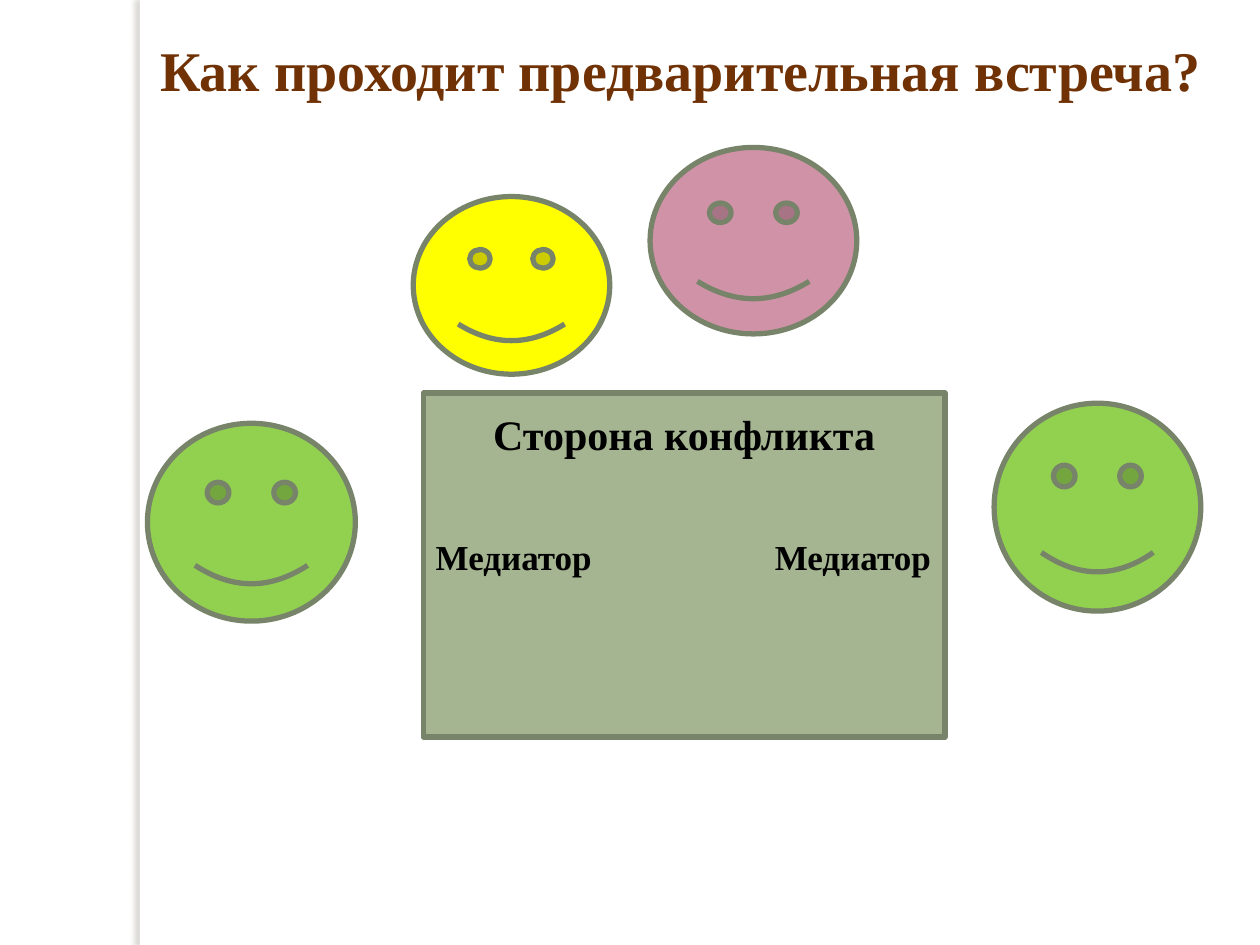
from lxml.etree import SubElement
from pptx import Presentation
from pptx.dml.color import RGBColor
from pptx.enum.shapes import MSO_SHAPE
from pptx.enum.text import MSO_ANCHOR, MSO_AUTO_SIZE, PP_ALIGN
from pptx.oxml.ns import qn
from pptx.util import Inches, Pt

COLORS = {
    "white": "FFFFFF", "title": "703204", "text": "000000",
    "table": "A5B592", "outline": "78846A", "shadow": "736F63",
    "mediator": "92D050", "yellow": "FFFF00", "pink": "D092A7",
}


def rgb(name):
    return RGBColor.from_string(COLORS[name])


def write(p, text, size, color="text", align=PP_ALIGN.LEFT, font="Times New Roman", after=0):
    p.alignment = align
    p.space_before, p.space_after = Pt(0), Pt(after)
    r = p.add_run()
    r.text = text
    r.font.name, r.font.size, r.font.bold = font, Pt(size), True
    r.font.color.rgb = rgb(color)


def add_right_tab(p, position):
    tabs = SubElement(p._p.get_or_add_pPr(), qn("a:tabLst"))
    SubElement(tabs, qn("a:tab"), pos=str(position), algn="r")


class SlideBuilder:
    line_width = Pt(3)

    def __init__(self, prs):
        self.s = prs.slides.add_slide(prs.slide_layouts[5])

    def shape(self, kind, left, top, width, height, fill, outlined=True):
        sp = self.s.shapes.add_shape(
            kind, Inches(left), Inches(top), Inches(width), Inches(height))
        sp.shadow.inherit = False
        sp.fill.solid()
        sp.fill.fore_color.rgb = rgb(fill)
        if outlined:
            sp.line.color.rgb = rgb("outline")
            sp.line.width = self.line_width
        else:
            sp.line.fill.background()
        return sp

    def side_strip(self):
        """Add the white strip that casts a soft shadow to the left."""
        sp = self.shape(MSO_SHAPE.RECTANGLE, 1.11, 0, 0.08, 7.5, "white", outlined=False)
        effects = sp._element.spPr.find(qn("a:effectLst"))
        shadow = SubElement(effects, qn("a:outerShdw"), blurRad=str(Pt(3)),
                            dist=str(Pt(3)), dir="10800000", algn="tl", rotWithShape="0")
        color = SubElement(shadow, qn("a:srgbClr"), val=COLORS["shadow"])
        SubElement(color, qn("a:alpha"), val="25000")

    def title(self, text):
        sp = self.s.shapes.title
        sp.left, sp.top, sp.width, sp.height = map(Inches, (1.17, 0.23, 8.52, 0.64))
        tf = sp.text_frame
        tf.word_wrap = True
        tf.auto_size = MSO_AUTO_SIZE.SHAPE_TO_FIT_TEXT
        tf.vertical_anchor = MSO_ANCHOR.TOP
        write(tf.paragraphs[0], text, 32, "title")

    def meeting_table(self, heading, left_seat, right_seat):
        sp = self.shape(MSO_SHAPE.RECTANGLE, 3.36, 3.12, 4.14, 2.73, "table")
        tf = sp.text_frame
        tf.word_wrap = True
        tf.vertical_anchor = MSO_ANCHOR.TOP
        tf.margin_top = Inches(0.12)
        write(tf.paragraphs[0], heading, 24, align=PP_ALIGN.CENTER, after=44)
        p = tf.add_paragraph()
        write(p, f"{left_seat}\t{right_seat}", 20)
        add_right_tab(p, Inches(3.93))

    def face(self, left, top, width, height, fill):
        sp = self.shape(MSO_SHAPE.SMILEY_FACE, left, top, width, height, fill)
        sp.adjustments[0] = 0.047


def main():
    prs = Presentation()
    prs.slide_width, prs.slide_height = Inches(10), Inches(7.5)
    slide = SlideBuilder(prs)
    slide.side_strip()
    slide.title("Как проходит предварительная встреча?")
    slide.meeting_table("Сторона конфликта", "Медиатор", "Медиатор")
    for face in (
        (1.17, 3.36, 1.65, 1.57, "mediator"),
        (7.89, 3.2, 1.64, 1.65, "mediator"),
        (3.28, 1.56, 1.56, 1.41, "yellow"),
        (5.16, 1.17, 1.64, 1.48, "pink"),
    ):
        slide.face(*face)
    prs.save("out.pptx")


if __name__ == "__main__":
    main()
